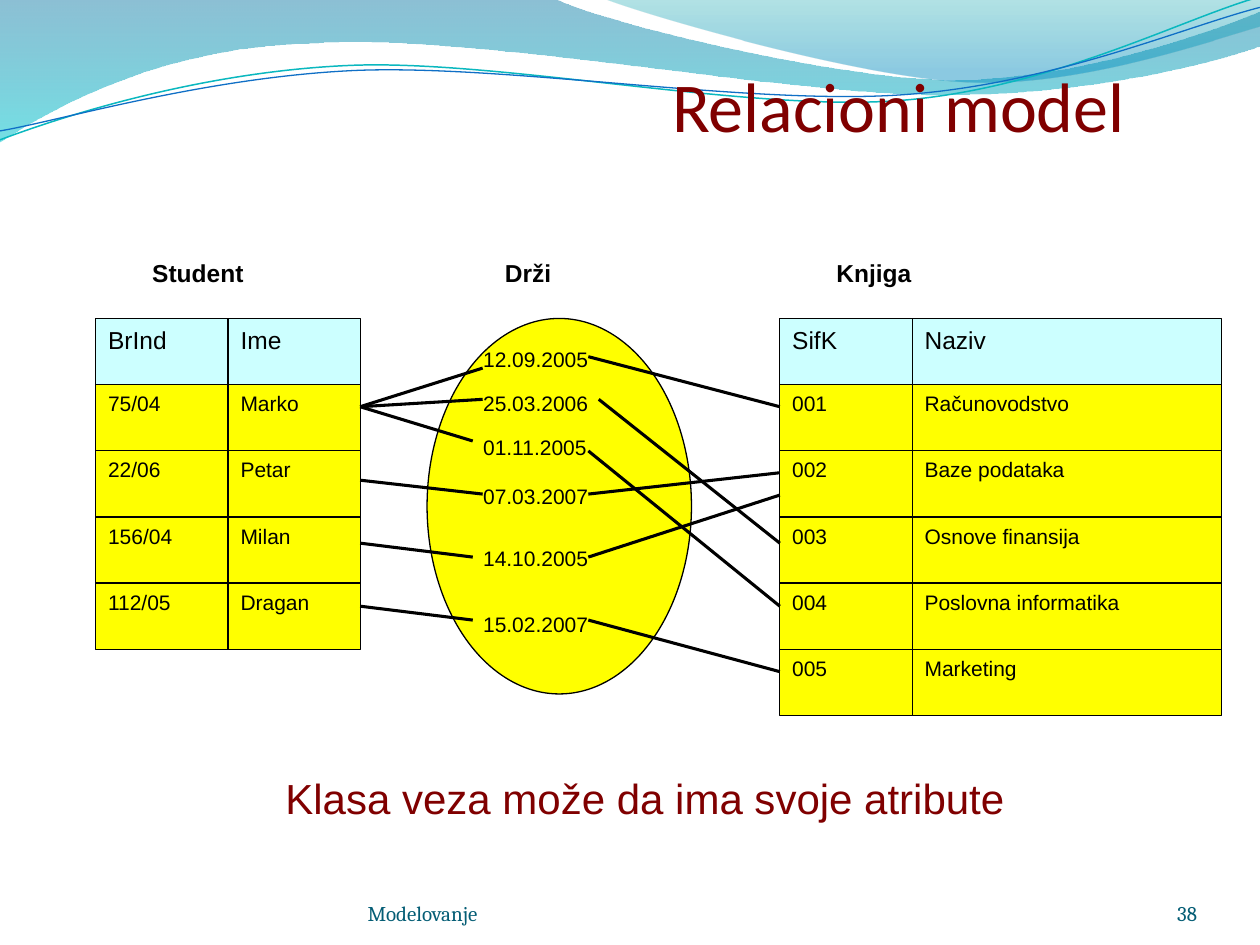
from lxml.etree import SubElement
from pptx import Presentation
from pptx.dml.color import RGBColor
from pptx.enum.shapes import MSO_CONNECTOR, MSO_SHAPE
from pptx.enum.text import MSO_ANCHOR, MSO_AUTO_SIZE, PP_ALIGN
from pptx.oxml.ns import qn
from pptx.util import Cm, Pt

BLACK = RGBColor(0x00, 0x00, 0x00)
MAROON = RGBColor(0x80, 0x00, 0x00)
YELLOW = RGBColor(0xFF, 0xFF, 0x00)
PALE_CYAN = RGBColor(0xCC, 0xFF, 0xFF)
FOOTER_BLUE = RGBColor(0x04, 0x5D, 0x75)
TEAL = RGBColor(0x0A, 0xB8, 0xBF)
BLUE = RGBColor(0x0F, 0x6F, 0xC6)
DEEP_BLUE = RGBColor(0x00, 0x74, 0xA1)
BRIGHT_CYAN = RGBColor(0x00, 0xC6, 0xCF)
SEA_GREEN = RGBColor(0x00, 0xA1, 0xA9)
SKY_BLUE = RGBColor(0x00, 0x8B, 0xBF)

# Each outline is a start point, then lines (x, y) and cubic curves (three points).
WIDE_WAVE = [
    (0, 0), (11.18, -0.03),
    (12.09, 0.43, 16.87, 1.6, 19.25, 1.6),
    (21.67, 1.6, 24.33, 0.66, 25.4, 0.23),
    (25.43, 0.91),
    (24.97, 1.12, 22.1, 1.93, 18.95, 1.91),
    (15.8, 1.91, 9.7, 0.71, 6.53, 0.86),
    (3.28, 0.91, 1.17, 2.11, -0.03, 2.87),
]
RIGHT_WAVE = [
    (12.17, -0.03),
    (12.93, 0.28, 17.32, 1.57, 19.53, 1.65),
    (21.74, 1.75, 24.41, 0.81, 25.4, 0.53),
    (25.4, 0),
]
TEAL_CURVE = [
    (0, 2.82),
    (1.22, 2.36, 4.01, 1.45, 7.04, 1.32),
    (10.03, 1.19, 15.06, 2.26, 18.11, 2.03),
    (21.16, 1.8, 23.83, 0.38, 25.35, -0.05),
]
BLUE_CURVE = [
    (0, 2.64),
    (1.19, 2.44, 4.17, 1.55, 7.19, 1.42),
    (10.24, 1.3, 15.16, 2.13, 18.21, 1.91),
    (21.23, 1.7, 23.9, 0.53, 25.4, 0.15),
]

STUDENTS = [("BrInd", "Ime"), ("75/04", "Marko"), ("22/06", "Petar"),
            ("156/04", "Milan"), ("112/05", "Dragan")]
BOOKS = [("SifK", "Naziv"), ("001", "Računovodstvo"), ("002", "Baze podataka"),
         ("003", "Osnove finansija"), ("004", "Poslovna informatika"),
         ("005", "Marketing")]
STUDENT_LEFT, BOOK_LEFT, GRID_TOP = 1.93, 15.72, 6.42
KEY_WIDTH, BOOK_WIDTH, ROW_HEIGHT = 2.67, 6.23, 6.67 / 5
STUDENT_EDGE = 7.26

# Date, top of its box, student y, left end, right start, book y
LOANS = [
    ("12.09.2005", 6.86, 8.2, (9.73, 7.42), (11.86, 7.19), 8.2),
    ("25.03.2006", 7.75, 8.2, (9.73, 8.05), (12.07, 8.05), 10.95),
    ("01.11.2005", 8.64, 8.2, (9.53, 8.89), (11.86, 9.09), 12.22),
    ("07.03.2007", 9.63, 9.68, (9.73, 9.96), (11.86, 9.96), 9.53),
    ("14.10.2005", 10.88, 10.95, (9.53, 11.23), (11.86, 11.23), 9.98),
    ("15.02.2007", 12.21, 12.22, (9.53, 12.5), (11.86, 12.5), 13.54),
]


def write(frame, text, size=12, font="Arial", color=BLACK, bold=False,
          align=PP_ALIGN.LEFT):
    para = frame.paragraphs[0]
    para.alignment = align
    span = para.add_run()
    span.text = text
    span.font.name, span.font.size = font, Pt(size)
    span.font.color.rgb, span.font.bold = color, bold


class Painter:
    """Holds the line style and the page being drawn."""

    def __init__(self, page, thin=0.75, thick=1.75):
        self.page, self.thin, self.thick = page, thin, thick

    def outline(self, segments, close):
        """Build the outline from its points, then bend each triple into a cubic."""
        points = [(Cm(segment[i]), Cm(segment[i + 1]))
                  for segment in segments for i in range(0, len(segment), 2)]
        builder = self.page.shapes.build_freeform(*points[0])
        builder.add_line_segments(points[1:], close=close)
        shape = builder.convert_to_shape()
        shape.shadow.inherit = False
        steps = shape._element.iter(qn("a:lnTo"))
        steps = iter(list(steps))
        for segment in segments[1:]:
            step = next(steps)
            if len(segment) == 6:
                step.tag = qn("a:cubicBezTo")
                for _ in range(2):
                    extra = next(steps)
                    step.append(extra[0])
                    extra.getparent().remove(extra)
        return shape

    def wave(self, segments, *stops):
        """Each stop is position, colour and opacity in percent."""
        shape = self.outline(segments, True)
        shape.line.fill.background()
        shape.fill.gradient()
        shape.fill.gradient_angle = 270
        for stop, (position, color, _) in zip(shape.fill.gradient_stops, stops):
            stop.position, stop.color.rgb = position, color
        colors = shape._element.iter(qn("a:srgbClr"))
        for element, (_, _, opacity) in zip(list(colors), stops):
            SubElement(element, qn("a:alpha")).set("val", str(opacity * 1000))

    def curve(self, segments, color, width):
        shape = self.outline(segments, False)
        shape.fill.background()
        shape.line.color.rgb, shape.line.width = color, Pt(width)

    def title(self, text, left, top, width, height):
        box = self.page.shapes.title
        box._element.getparent().append(box._element)  # in front of the waves
        box.left, box.top, box.width, box.height = map(Cm, (left, top, width, height))
        frame = box.text_frame
        frame.margin_left = frame.margin_right = frame.margin_bottom = 0
        frame.auto_size = MSO_AUTO_SIZE.NONE
        frame.vertical_anchor = MSO_ANCHOR.BOTTOM
        write(frame, text, size=40, font="Calibri", color=MAROON)

    def text(self, text, left, top, width, height, anchor=MSO_ANCHOR.TOP,
             margins=True, **style):
        frame = self.page.shapes.add_textbox(*map(Cm, (left, top, width, height))).text_frame
        frame.word_wrap = True
        frame.vertical_anchor = anchor
        if not margins:
            frame.margin_left = frame.margin_right = 0
            frame.margin_top = frame.margin_bottom = 0
        write(frame, text, **style)

    def shape(self, kind, fill, left, top, width, height):
        shape = self.page.shapes.add_shape(kind, *map(Cm, (left, top, width, height)))
        shape.shadow.inherit = False
        shape.fill.solid()
        shape.fill.fore_color.rgb = fill
        shape.line.color.rgb, shape.line.width = BLACK, Pt(self.thin)
        return shape

    def grid(self, rows, left, widths):
        """Draw the rows as boxes, the first one as a header."""
        for r, values in enumerate(rows):
            for c, value in enumerate(values):
                box = self.shape(MSO_SHAPE.RECTANGLE, YELLOW if r else PALE_CYAN,
                                 left + sum(widths[:c]), GRID_TOP + r * ROW_HEIGHT,
                                 widths[c], ROW_HEIGHT)
                box.text_frame.vertical_anchor = MSO_ANCHOR.TOP
                write(box.text_frame, value, size=12 if r else 14)

    def line(self, start, end):
        connector = self.page.shapes.add_connector(
            MSO_CONNECTOR.STRAIGHT, *map(Cm, (*start, *end)))
        connector.line.color.rgb, connector.line.width = BLACK, Pt(self.thick)
        SubElement(connector._element.spPr, qn("a:effectLst"))


def main():
    deck = Presentation()
    deck.slide_width, deck.slide_height = Cm(25.4), Cm(19.05)
    painter = Painter(deck.slides.add_slide(deck.slide_layouts[5]))

    painter.wave(WIDE_WAVE, (0, DEEP_BLUE, 45), (1, BRIGHT_CYAN, 55))
    painter.wave(RIGHT_WAVE, (0, SEA_GREEN, 30), (0.8, SKY_BLUE, 45))
    painter.curve(TEAL_CURVE, TEAL, 0.85)
    painter.curve(BLUE_CURVE, BLUE, 0.75)
    painter.title("Relacioni model", 13.55, 0, 11.85, 2.96)

    footer = dict(anchor=MSO_ANCHOR.BOTTOM, margins=False, font="Cambria", color=FOOTER_BLUE)
    painter.text("Modelovanje", 7.41, 17.66, 9.31, 1.01, **footer)
    painter.text("38", 22.01, 17.66, 2.12, 1.01, align=PP_ALIGN.RIGHT, **footer)
    painter.text("Klasa veza može da ima svoje atribute ", 1.48, 15.45, 23.28, 1.27,
                 anchor=MSO_ANCHOR.MIDDLE, size=24, color=MAROON, align=PP_ALIGN.CENTER)

    painter.grid(STUDENTS, STUDENT_LEFT, (KEY_WIDTH, KEY_WIDTH))
    painter.grid(BOOKS, BOOK_LEFT, (KEY_WIDTH, BOOK_WIDTH))
    for heading, left, width in (("Student", 2.82, 3.56), ("Drži", 9.93, 2.69),
                                 ("Knjiga", 16.61, 3.56)):
        painter.text(heading, left, 5.08, width, 1.33, size=14, bold=True)

    painter.shape(MSO_SHAPE.OVAL, YELLOW, 8.61, GRID_TOP, 5.33, 7.57)
    for date, top, student_y, left_end, right_start, book_y in LOANS:
        painter.text(date, 9.49, top, 3.56, 1.33)
        painter.line((STUDENT_EDGE, student_y), left_end)
        painter.line(right_start, (BOOK_LEFT, book_y))

    deck.save("out.pptx")


if __name__ == "__main__":
    main()
